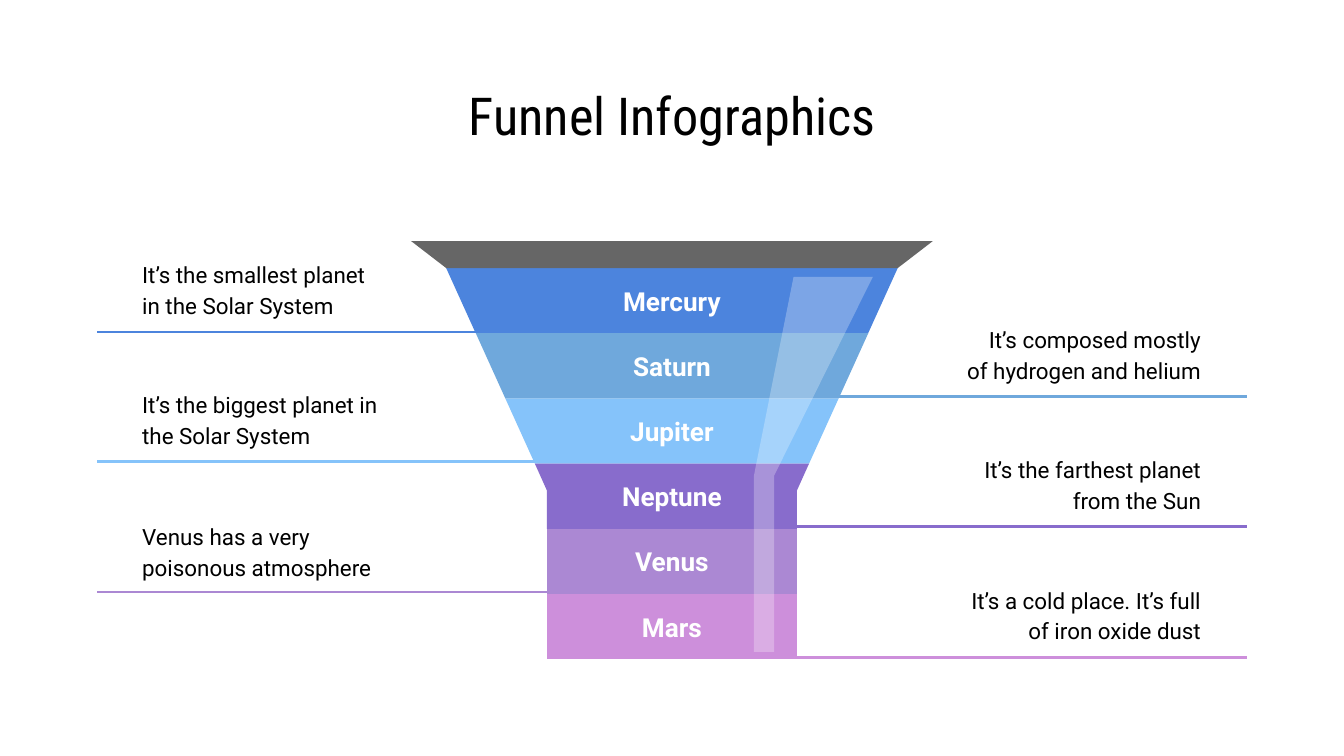
"""Build a funnel infographic slide with six labelled planet tiers."""
from dataclasses import dataclass

import lxml.etree
import pptx
import pptx.dml.color
import pptx.enum.shapes
import pptx.enum.text
import pptx.oxml.ns
import pptx.util

PX = pptx.util.Inches(1) // 200
WIDTH, HEIGHT = 2000, 1125
FUNNEL_TOP, TIER_HEIGHT = 399, 97
NECK_Y, NECK_LEFT, MOUTH_LEFT = 730, 814, 664
ALIGN = pptx.enum.text.PP_ALIGN


@dataclass(frozen=True)
class Theme:
    heading_font: str = "Roboto Condensed"
    body_font: str = "Roboto"
    title_size: int = 28
    tier_size: int = 14
    note_size: int = 12
    rule_width: float = 1.5
    ink: str = "000000"
    light: str = "FFFFFF"
    rim: str = "666666"
    glare_alpha: int = 27


@dataclass(frozen=True)
class Tier:
    level: int
    planet: str
    color: str
    note: str
    note_top: int
    rule_start: int

    @property
    def on_left(self) -> bool:
        return self.level % 2 == 0


THEME = Theme()
TIERS = [
    Tier(0, "Mercury", "4C84DD", "It’s the smallest planet in the Solar System", 363, 900),
    Tier(2, "Jupiter", "85C3FA", "It’s the biggest planet in the Solar System", 556, 950),
    Tier(4, "Venus", "AB88D3", "Venus has a very poisonous atmosphere", 753, 950),
    Tier(1, "Saturn", "6FA8DC", "It’s composed mostly of hydrogen and helium", 460, 1100),
    Tier(3, "Neptune", "886CCC", "It’s the farthest planet from the Sun", 653, 1050),
    Tier(5, "Mars", "CD8FDB", "It’s a cold place. It’s full of iron oxide dust", 847, 1050),
]
GLARE = [(1181, 412), (1122, 708), (1122, 970), (1152, 970), (1152, 708), (1299, 412)]
RIM = [(612, 359), (664, 399), (1336, 399), (1388, 359)]


def rgb(color: str) -> pptx.dml.color.RGBColor:
    return pptx.dml.color.RGBColor.from_string(color)


def place(shape, left: int, top: int, width: int, height: int) -> None:
    shape.left, shape.top = left * PX, top * PX
    shape.width, shape.height = width * PX, height * PX


def write(shape, text: str, font: str, size: int, color: str, align, bold: bool = False):
    frame = shape.text_frame
    frame.word_wrap = True
    frame.margin_left = frame.margin_right = frame.margin_top = frame.margin_bottom = 20 * PX
    paragraph = frame.paragraphs[0]
    paragraph.alignment = align
    run = paragraph.add_run()
    run.text = text
    run.font.name, run.font.size, run.font.bold = font, pptx.util.Pt(size), bold
    run.font.color.rgb = rgb(color)
    return paragraph


def draw_outline(slide, points: list[tuple[int, int]], color: str):
    builder = slide.shapes.build_freeform(*points[0], scale=PX)
    builder.add_line_segments(points[1:], close=True)
    outline = builder.convert_to_shape()
    outline.shadow.inherit = False
    outline.fill.solid()
    outline.fill.fore_color.rgb = rgb(color)
    outline.line.fill.background()
    return outline


def funnel_left(y: int) -> int:
    slope = (NECK_LEFT - MOUTH_LEFT) / (NECK_Y - FUNNEL_TOP)
    return min(NECK_LEFT, round(MOUTH_LEFT + (y - FUNNEL_TOP) * slope))


def draw_tier(slide, tier: Tier) -> None:
    top = FUNNEL_TOP + TIER_HEIGHT * tier.level
    bottom = top + TIER_HEIGHT
    heights = [top, NECK_Y, bottom] if top < NECK_Y < bottom else [top, bottom]
    left_side = [(funnel_left(y), y) for y in heights]
    right_side = [(WIDTH - x, y) for x, y in reversed(left_side)]
    band = draw_outline(slide, left_side + right_side, tier.color)
    band.text_frame.vertical_anchor = pptx.enum.text.MSO_ANCHOR.MIDDLE
    write(band, tier.planet, THEME.body_font, THEME.tier_size, THEME.light, ALIGN.CENTER, True)

    rule_y = 494 + 968 * tier.level // 10
    rule_end = 144 if tier.on_left else WIDTH - 144
    rule = slide.shapes.add_connector(
        pptx.enum.shapes.MSO_CONNECTOR.STRAIGHT,
        tier.rule_start * PX, rule_y * PX, rule_end * PX, rule_y * PX)
    rule.line.color.rgb = rgb(tier.color)
    rule.line.width = pptx.util.Pt(THEME.rule_width)
    lxml.etree.SubElement(rule._element.spPr, pptx.oxml.ns.qn("a:effectLst"))


def draw_note(slide, tier: Tier) -> None:
    note = slide.shapes.add_textbox(0, 0, 0, 0)
    place(note, 192 if tier.on_left else 1415, tier.note_top, 392, 124)
    align = ALIGN.LEFT if tier.on_left else ALIGN.RIGHT
    paragraph = write(note, tier.note, THEME.body_font, THEME.note_size, THEME.ink, align)
    paragraph.line_spacing = 1.15


def draw_glare(slide) -> None:
    glare = draw_outline(slide, GLARE, THEME.light)
    tint = glare._element.spPr.find(".//" + pptx.oxml.ns.qn("a:srgbClr"))
    alpha = lxml.etree.SubElement(tint, pptx.oxml.ns.qn("a:alpha"))
    alpha.set("val", str(THEME.glare_alpha * 1000))


def main() -> None:
    deck = pptx.Presentation()
    deck.slide_width, deck.slide_height = WIDTH * PX, HEIGHT * PX
    slide = deck.slides.add_slide(deck.slide_layouts[5])
    for tier in TIERS:
        draw_tier(slide, tier)
    title = slide.shapes.title
    place(title, 625, 118, 750, 106)
    title.text_frame.vertical_anchor = pptx.enum.text.MSO_ANCHOR.MIDDLE
    write(title, "Funnel Infographics", THEME.heading_font, THEME.title_size,
          THEME.ink, ALIGN.CENTER)
    draw_glare(slide)
    draw_outline(slide, RIM, THEME.rim)
    for tier in TIERS:
        draw_note(slide, tier)
    deck.save("out.pptx")


if __name__ == "__main__":
    main()
